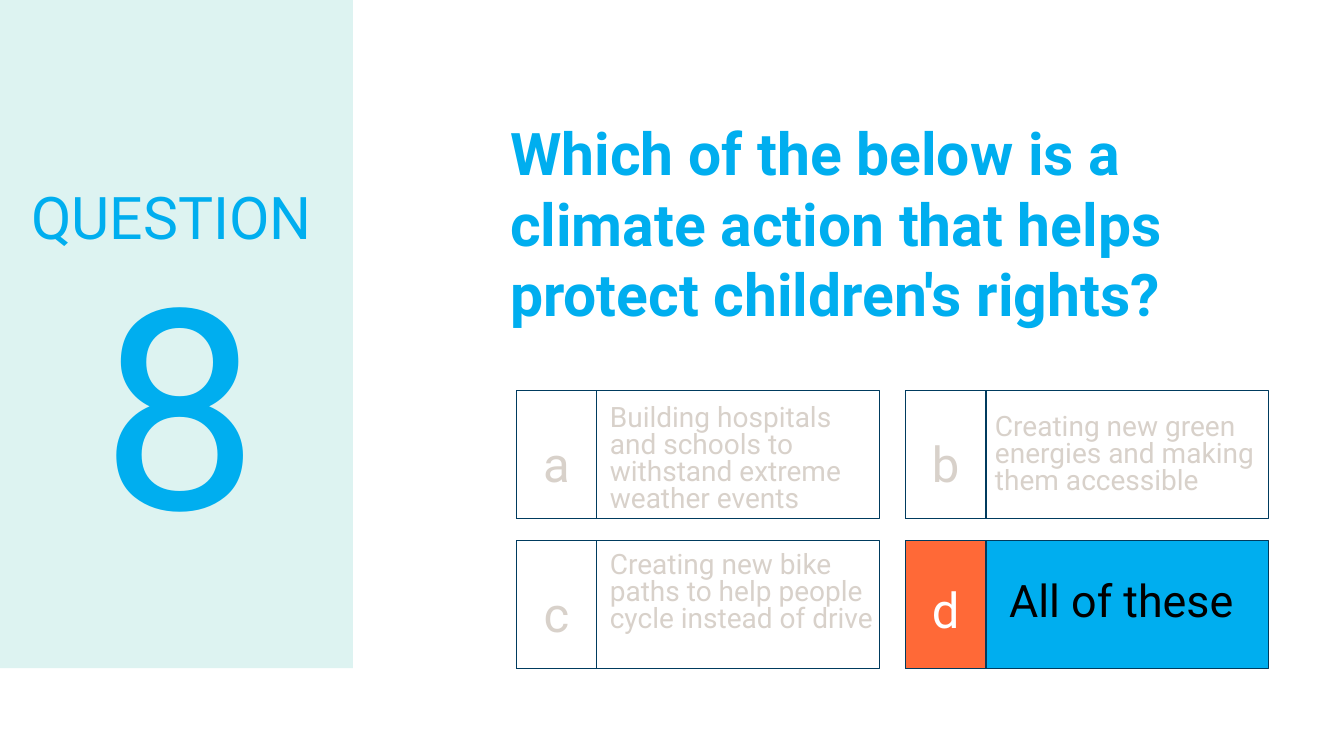
from pptx import Presentation
from pptx.dml.color import RGBColor
from pptx.enum.shapes import MSO_SHAPE
from pptx.enum.text import MSO_ANCHOR, PP_ALIGN
from pptx.util import Pt

RECTANGLE = MSO_SHAPE.RECTANGLE
LEFT, CENTER = PP_ALIGN.LEFT, PP_ALIGN.CENTER
TOP, MIDDLE = MSO_ANCHOR.TOP, MSO_ANCHOR.MIDDLE
PX = 9144
FONT = "Roboto"
COLORS = {
    "blue": "00AEEF",
    "mint": "DDF3F1",
    "navy": "003B5E",
    "orange": "FF6937",
    "grey": "D8D1CA",
    "white": "FFFFFF",
    "black": "000000",
}


def add_box(left, top, width, height, fill=None, line=None):
    box = slide.shapes.add_shape(RECTANGLE, left * PX, top * PX, width * PX, height * PX)
    box.shadow.inherit = False
    if fill:
        box.fill.solid()
        box.fill.fore_color.rgb = RGBColor.from_string(COLORS[fill])
    else:
        box.fill.background()
    if line:
        box.line.color.rgb = RGBColor.from_string(COLORS[line])
        box.line.width = Pt(0.75)
    else:
        box.line.fill.background()


def add_text(text, left, top, width, height, size, color,
             align=LEFT, anchor=TOP, spacing=1.0, inset=10, bold=False):
    frame = slide.shapes.add_textbox(left * PX, top * PX, width * PX, height * PX).text_frame
    frame.word_wrap = True
    frame.vertical_anchor = anchor
    frame.margin_left = frame.margin_right = inset * PX
    frame.margin_top = frame.margin_bottom = inset * PX
    frame.text = text
    paragraph = frame.paragraphs[0]
    paragraph.alignment = align
    paragraph.line_spacing = spacing
    font = paragraph.runs[0].font
    font.name = FONT
    font.size = Pt(size)
    font.bold = bold
    font.color.rgb = RGBColor.from_string(COLORS[color])


prs = Presentation()
prs.slide_width = 1333 * PX
prs.slide_height = 750 * PX
slide = prs.slides.add_slide(prs.slide_layouts[6])

add_box(0, 0, 350, 663, fill="mint")
add_text("QUESTION", 26, 168, 334, 101, 42, "blue", anchor=MIDDLE, spacing=0.9, inset=5)
add_text("8", 26, 259, 305, 312, 200, "blue", CENTER, MIDDLE, spacing=0.9, inset=5)
add_text("Which of the below is a climate action that helps protect children's rights?",
         498, 108, 748, 237, 42, "blue", inset=8, bold=True)

GRID_LEFT, GRID_TOP = 512, 387
COLUMN_STEP, ROW_STEP = 386, 149
CARD_WIDTH, CARD_HEIGHT, LETTER_WIDTH = 360, 127, 80

answers = [
    ("a", "Building hospitals and schools to withstand extreme weather events", 83, 6, 281, 128),
    ("b", "Creating new green energies and making them accessible", 79, 15, 281, 101),
    ("c", "Creating new bike paths to help people cycle instead of drive", 83, 3, 281, 128),
    ("d", "All of these", 93, 37, 261, 58),
]

for index, (letter, answer, indent, drop, width, height) in enumerate(answers):
    row, column = divmod(index, 2)
    left = GRID_LEFT + column * COLUMN_STEP
    top = GRID_TOP + row * ROW_STEP
    correct = letter == "d"
    add_box(left, top, CARD_WIDTH, CARD_HEIGHT, "blue" if correct else None, "navy")
    add_box(left, top, LETTER_WIDTH, CARD_HEIGHT, "orange" if correct else None, "navy")
    add_text(letter, left, top + (20 if correct else 24), LETTER_WIDTH, 79, 35,
             "white" if correct else "grey", CENTER, spacing=1.15)
    add_text(answer, left + indent, top + drop, width, height, 32 if correct else 20,
             "black" if correct else "grey", spacing=0.7 if correct else 0.8)

prs.save("out.pptx")
